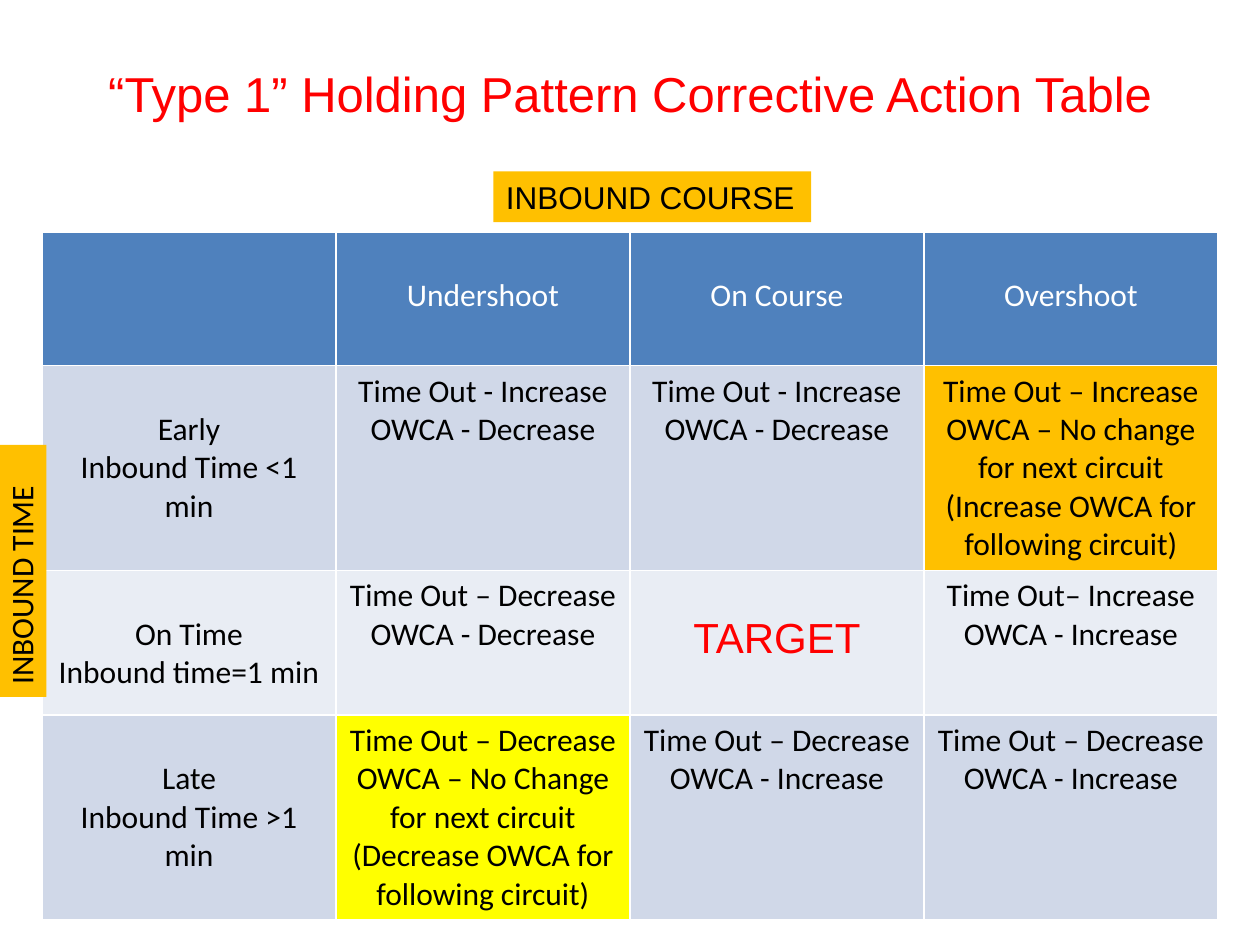
from dataclasses import dataclass

from pptx import Presentation
from pptx import util as u
from pptx.dml.color import RGBColor
from pptx.enum import text as t

Pt = u.Pt
RED = RGBColor(0xFF, 0, 0)
BLACK = RGBColor(0, 0, 0)
WHITE = RGBColor(0xFF, 0xFF, 0xFF)
BLUE = RGBColor(0x4F, 0x81, 0xBD)
PALE = RGBColor(0xD0, 0xD8, 0xE8)
LIGHT = RGBColor(0xE9, 0xED, 0xF4)
AMBER = RGBColor(0xFF, 0xC0, 0)
YELLOW = RGBColor(0xFF, 0xFF, 0)
PAD = 3.6
LINE = 22


@dataclass(frozen=True)
class Font:
    name: str = "Calibri"
    size: float = 18
    color: RGBColor = BLACK


@dataclass(frozen=True)
class Cell:
    lines: tuple[str, ...]
    fill: RGBColor
    font: Font = Font()
    drop: bool = False


@dataclass(frozen=True)
class Label:
    words: str
    left: float
    top: float
    width: float
    font: Font
    turn: float = 0
    wrap: bool = True


HEAD = Font(color=WHITE)
GOAL = Font("Arial", 24, RED)
ROWS = (
    (76.5, (
        Cell((), BLUE),
        Cell(("Undershoot",), BLUE, HEAD, True),
        Cell(("On Course",), BLUE, HEAD, True),
        Cell(("Overshoot",), BLUE, HEAD, True),
    )),
    (117, (
        Cell(("Early", "Inbound Time <1 min"), PALE, drop=True),
        Cell(("Time Out - Increase", "OWCA - Decrease"), PALE),
        Cell(("Time Out - Increase", "OWCA - Decrease"), PALE),
        Cell(("Time Out – Increase", "OWCA – No change for next circuit",
              "(Increase OWCA for following circuit)"), AMBER),
    )),
    (82.5, (
        Cell(("On Time", "Inbound time=1 min"), LIGHT, drop=True),
        Cell(("Time Out – Decrease", "OWCA - Decrease"), LIGHT),
        Cell(("TARGET",), LIGHT, GOAL, True),
        Cell(("Time Out– Increase", "OWCA - Increase"), LIGHT),
    )),
    (117, (
        Cell(("Late", "Inbound Time >1 min"), PALE, drop=True),
        Cell(("Time Out – Decrease",
              "OWCA – No Change for next circuit "
              "(Decrease OWCA for following circuit)"), YELLOW),
        Cell(("Time Out – Decrease", "OWCA - Increase"), PALE),
        Cell(("Time Out – Decrease", "OWCA - Increase"), PALE),
    )),
)
LABELS = (
    Label("INBOUND COURSE", 282, 98, 181.5, Font("Arial"), wrap=False),
    Label("INBOUND TIME", -60, 311.75, 144, Font(), turn=270),
)


def write(frame, lines: tuple[str, ...], font: Font, align) -> None:
    for i, line in enumerate(lines):
        para = frame.add_paragraph() if i else frame.paragraphs[0]
        para.alignment = align
        run = para.add_run()
        run.text = line
        run.font.name = font.name
        run.font.size = Pt(font.size)
        run.font.bold = False
        run.font.color.rgb = font.color


def title(slide) -> None:
    box = slide.shapes.title
    box.left, box.top = Pt(36), Pt(8)
    box.width, box.height = Pt(648), Pt(90)
    box.text_frame.vertical_anchor = t.MSO_ANCHOR.MIDDLE
    write(box.text_frame, ("“Type 1” Holding Pattern Corrective Action Table",),
          Font("Arial", 28, RED), t.PP_ALIGN.CENTER)


def table(slide) -> None:
    high = sum(row[0] for row in ROWS)
    grid = slide.shapes.add_table(
        len(ROWS), 4, Pt(24), Pt(132.5), Pt(672), Pt(high)).table
    for col in grid.columns:
        col.width = Pt(168)
    for r, (tall, cells) in enumerate(ROWS):
        grid.rows[r].height = Pt(tall)
        for c, item in enumerate(cells):
            cell = grid.cell(r, c)
            cell.fill.solid()
            cell.fill.fore_color.rgb = item.fill
            cell.margin_top = Pt(PAD + LINE * item.drop)
            write(cell.text_frame, item.lines, item.font, t.PP_ALIGN.CENTER)


def label(slide, item: Label) -> None:
    box = slide.shapes.add_textbox(
        Pt(item.left), Pt(item.top), Pt(item.width), Pt(29))
    box.rotation = item.turn
    box.fill.solid()
    box.fill.fore_color.rgb = AMBER
    frame = box.text_frame
    frame.word_wrap = item.wrap
    frame.auto_size = t.MSO_AUTO_SIZE.SHAPE_TO_FIT_TEXT
    write(frame, (item.words,), item.font, t.PP_ALIGN.LEFT)


def main() -> None:
    deck = Presentation()
    deck.slide_width, deck.slide_height = Pt(720), Pt(540)
    slide = deck.slides.add_slide(deck.slide_layouts[5])
    title(slide)
    table(slide)
    for item in LABELS:
        label(slide, item)
    deck.save("out.pptx")


if __name__ == "__main__":
    main()
